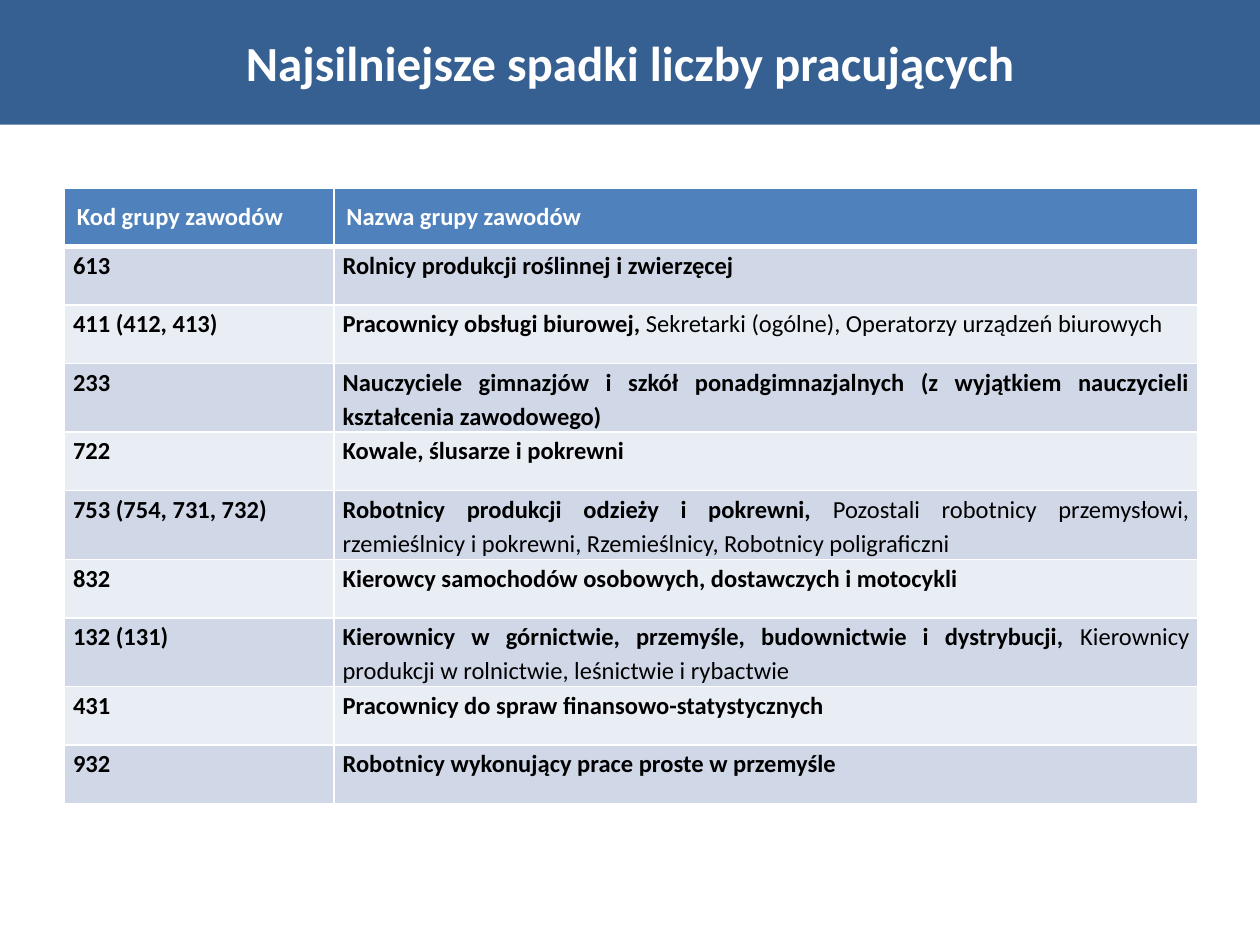
import pptx
import pptx.dml.color
import pptx.enum.text
import pptx.oxml.ns
import pptx.util
from dataclasses import dataclass
from lxml import etree

Inches = pptx.util.Inches
Pt = pptx.util.Pt
RGB = pptx.dml.color.RGBColor
ALIGN = pptx.enum.text.PP_ALIGN
MIDDLE = pptx.enum.text.MSO_ANCHOR.MIDDLE
qn = pptx.oxml.ns.qn

WHITE = RGB(0xFF, 0xFF, 0xFF)
BLACK = RGB(0, 0, 0)
NAVY = RGB(0x37, 0x60, 0x92)
BLUE = RGB(0x4F, 0x81, 0xBD)
BANDS = (RGB(0xD0, 0xD8, 0xE8), RGB(0xE9, 0xED, 0xF4))
FONT = "Calibri"
COLS = (2.14, 6.86)
ROW = 0.465


@dataclass
class Group:
    code: str
    name: str
    more: str = ""


GROUPS = (
    Group("613", "Rolnicy produkcji roślinnej i zwierzęcej"),
    Group("411 (412, 413)", "Pracownicy obsługi biurowej,",
          " Sekretarki (ogólne), Operatorzy urządzeń biurowych"),
    Group("233", "Nauczyciele gimnazjów i szkół ponadgimnazjalnych "
          "(z wyjątkiem nauczycieli kształcenia zawodowego)"),
    Group("722", "Kowale, ślusarze i pokrewni"),
    Group("753 (754, 731, 732)", "Robotnicy produkcji odzieży i pokrewni,",
          " Pozostali robotnicy przemysłowi, rzemieślnicy i pokrewni, "
          "Rzemieślnicy, Robotnicy poligraficzni"),
    Group("832", "Kierowcy samochodów osobowych, dostawczych i motocykli"),
    Group("132 (131)", "Kierownicy w górnictwie, przemyśle, budownictwie i dystrybucji,",
          " Kierownicy produkcji w rolnictwie, leśnictwie i rybactwie"),
    Group("431", "Pracownicy do spraw finansowo-statystycznych"),
    Group("932", "Robotnicy wykonujący prace proste w przemyśle"),
)
HEAD = Group("Kod grupy zawodów", "Nazwa grupy zawodów")
HEAD_FORM = {"vertical_anchor": MIDDLE}
BODY_FORM = {"margin_left": Inches(0.07), "margin_right": Inches(0.07),
             "margin_top": 0, "margin_bottom": 0}


def set_all(item, form: dict) -> None:
    for key, value in form.items():
        setattr(item, key, value)


def add_run(para, text: str, size: int, color: RGB, bold: bool = True) -> None:
    run = para.add_run()
    run.text = text
    set_all(run.font, {"name": FONT, "size": Pt(size), "bold": bold})
    run.font.color.rgb = color


def add_edges(cell, top: int, bottom: int) -> None:
    """Draw white cell borders; call before the fill is set."""
    props = cell._tc.get_or_add_tcPr()
    for side, width in {"L": 1, "R": 1, "T": top, "B": bottom}.items():
        line = etree.SubElement(props, qn(f"a:ln{side}"), w=str(Pt(width)))
        fill = etree.SubElement(line, qn("a:solidFill"))
        etree.SubElement(fill, qn("a:srgbClr"), val=str(WHITE))


def fill_row(table, index: int, group: Group) -> None:
    head = index == 0
    table.rows[index].height = Inches(ROW)
    for col, parts in enumerate(((group.code,), (group.name, group.more))):
        cell = table.cell(index, col)
        add_edges(cell, 3 if index == 1 else 1, 3 if head else 1)
        cell.fill.solid()
        cell.fill.fore_color.rgb = BLUE if head else BANDS[(index - 1) % 2]
        set_all(cell, HEAD_FORM if head else BODY_FORM)
        para = cell.text_frame.paragraphs[0]
        if not head:
            set_all(para, {"alignment": ALIGN.JUSTIFY, "line_spacing": 1.15})
        for place, text in enumerate(parts):
            if text:
                add_run(para, text, 14, WHITE if head else BLACK, place == 0)


def add_title(slide, text: str) -> None:
    title = slide.shapes.title
    set_all(title, {"left": 0, "top": 0, "width": Inches(10), "height": Inches(0.99)})
    title.fill.solid()
    title.fill.fore_color.rgb = NAVY
    title.text_frame.vertical_anchor = MIDDLE
    para = title.text_frame.paragraphs[0]
    para.alignment = ALIGN.CENTER
    add_run(para, text, 28, WHITE)


def main() -> None:
    deck = pptx.Presentation()
    set_all(deck, {"slide_width": Inches(10), "slide_height": Inches(7.5)})
    slide = deck.slides.add_slide(deck.slide_layouts[5])
    add_title(slide, "Najsilniejsze spadki liczby pracujących")
    rows = (HEAD, *GROUPS)
    table = slide.shapes.add_table(
        len(rows), len(COLS), Inches(0.51), Inches(1.49),
        Inches(sum(COLS)), Inches(ROW * len(rows))).table
    for col, width in zip(table.columns, COLS):
        col.width = Inches(width)
    for index, group in enumerate(rows):
        fill_row(table, index, group)
    deck.save("out.pptx")


if __name__ == "__main__":
    main()
